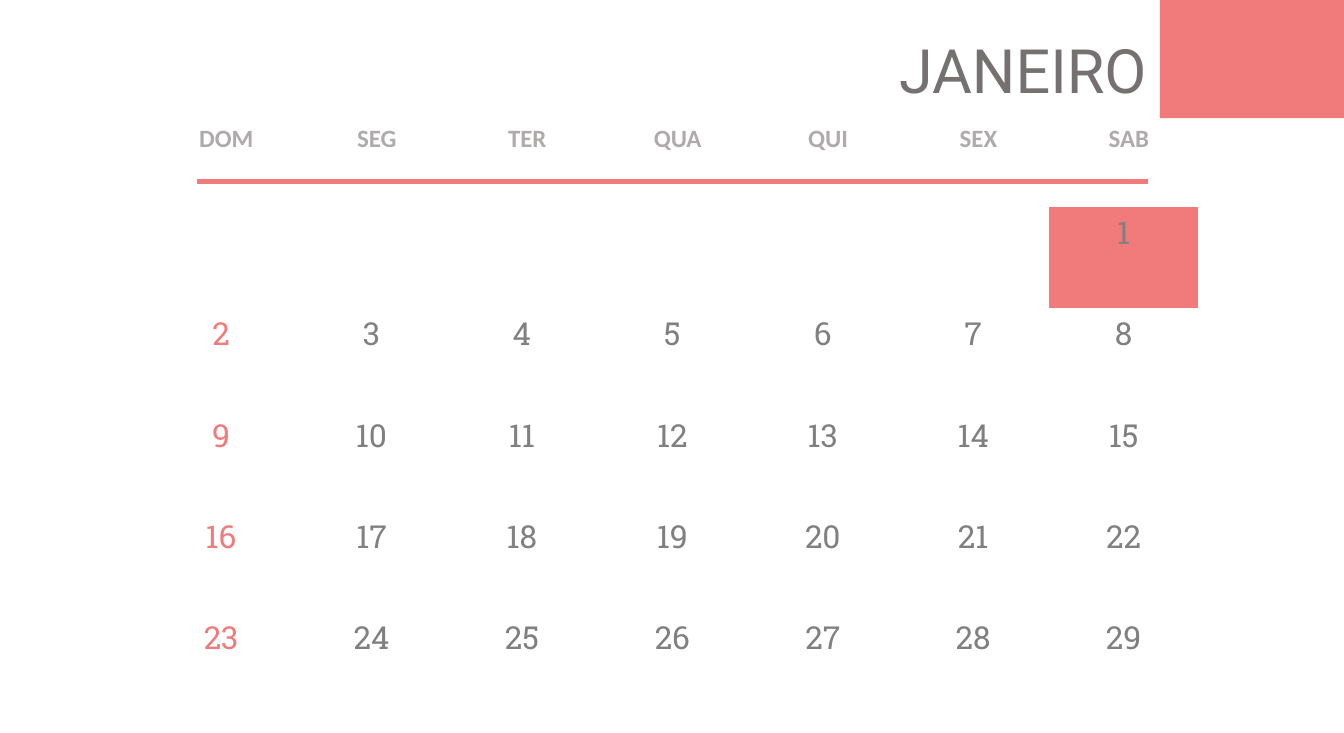
from dataclasses import dataclass

from lxml.etree import SubElement
from pptx import Presentation
from pptx.dml.color import RGBColor
from pptx.enum.shapes import MSO_CONNECTOR as Connector
from pptx.enum.shapes import MSO_SHAPE as Shape
from pptx.enum.text import MSO_AUTO_SIZE as AutoSize
from pptx.enum.text import PP_ALIGN as Align
from pptx.oxml.ns import qn
from pptx.util import Pt

CORAL = RGBColor(0xF1, 0x7B, 0x7B)
DAY_GRAY = RGBColor(0x80, 0x80, 0x80)
WEEKDAY_GRAY = RGBColor(0xAF, 0xAB, 0xAB)
TITLE_GRAY = RGBColor(0x76, 0x71, 0x71)
WHITE = RGBColor(0xFF, 0xFF, 0xFF)

WEEKDAYS = ["DOM", "SEG", "TER", "QUA", "QUI", "SEX", "SAB"]
FIRST_COLUMN = 6  # the month starts on a Saturday
LAST_DAY = 29
HOLIDAYS = {1}
WEEKS = 5

GRID_LEFT, GRID_TOP = 128.88, 104.4
COLUMN_WIDTH, HEADER_HEIGHT, WEEK_HEIGHT = 133, 78.48, 89.42


@dataclass(frozen=True)
class CellStyle:
    font: str
    size: float
    bold: bool
    margins: tuple[float, float, float, float]  # left, top, right, bottom


WEEKDAY_STYLE = CellStyle("Calibri", 22, True, (9.36, 5.04, 0, 5.04))
DAY_STYLE = CellStyle("Roboto Slab", 28, False, (10.08, 4.32, 10.08, 4.32))


def add_borders(cell, color: RGBColor, width: float) -> None:
    properties = cell._tc.get_or_add_tcPr()
    for position, side in enumerate(("a:lnL", "a:lnR", "a:lnT", "a:lnB")):
        border = SubElement(properties, qn(side), w=str(Pt(width)))
        properties.insert(position, border)
        fill = SubElement(border, qn("a:solidFill"))
        SubElement(fill, qn("a:srgbClr"), val=str(color))


def write_cell(cell, text: str, style: CellStyle, color: RGBColor) -> None:
    (cell.margin_left, cell.margin_top,
     cell.margin_right, cell.margin_bottom) = map(Pt, style.margins)
    cell.text = text
    paragraph = cell.text_frame.paragraphs[0]
    paragraph.alignment = Align.CENTER
    font = paragraph.font
    font.name, font.size, font.bold = style.font, Pt(style.size), style.bold
    font.color.rgb = color


def add_calendar(slide) -> None:
    columns = len(WEEKDAYS)
    calendar = slide.shapes.add_table(
        WEEKS + 1, columns, Pt(GRID_LEFT), Pt(GRID_TOP),
        Pt(COLUMN_WIDTH * columns), Pt(HEADER_HEIGHT + WEEK_HEIGHT * WEEKS),
    ).table
    calendar.first_row = calendar.horz_banding = False
    for column in calendar.columns:
        column.width = Pt(COLUMN_WIDTH)
    for index, row in enumerate(calendar.rows):
        row.height = Pt(WEEK_HEIGHT if index else HEADER_HEIGHT)
    for cell in calendar.iter_cells():
        cell.fill.background()
        add_borders(cell, WHITE, 1)

    # Weekday names
    for column, weekday in enumerate(WEEKDAYS):
        write_cell(calendar.cell(0, column), weekday, WEEKDAY_STYLE, WEEKDAY_GRAY)

    # Days, with Sundays in coral
    for day in range(1, LAST_DAY + 1):
        week, column = divmod(day - 1 + FIRST_COLUMN, columns)
        cell = calendar.cell(week + 1, column)
        write_cell(cell, str(day), DAY_STYLE, DAY_GRAY if column else CORAL)
        if day in HOLIDAYS:
            cell.fill.solid()
            cell.fill.fore_color.rgb = CORAL


def add_month(slide, name: str) -> None:
    month = slide.shapes.add_textbox(Pt(787.68), Pt(25.2), Pt(237.6), Pt(72.72))
    frame = month.text_frame
    frame.word_wrap = False
    frame.auto_size = AutoSize.SHAPE_TO_FIT_TEXT
    paragraph = frame.paragraphs[0]
    paragraph.text = name
    font = paragraph.font
    font.name, font.size = "Roboto", Pt(54)
    font.color.rgb = TITLE_GRAY


def add_header_rule(slide) -> None:
    rule = slide.shapes.add_connector(
        Connector.STRAIGHT, Pt(174.24), Pt(160.56), Pt(1014.48), Pt(160.56))
    rule.line.color.rgb = CORAL
    rule.line.width = Pt(4.5)
    SubElement(rule._element.spPr, qn("a:effectLst"))


def add_corner_block(slide) -> None:
    corner = slide.shapes.add_shape(
        Shape.RECTANGLE, Pt(1025.28), Pt(0), Pt(162.72), Pt(104.4))
    corner.shadow.inherit = False
    corner.fill.solid()
    corner.fill.fore_color.rgb = CORAL
    corner.line.fill.background()


def main() -> None:
    deck = Presentation()
    deck.slide_width, deck.slide_height = Pt(1188), Pt(648)
    slide = deck.slides.add_slide(deck.slide_layouts[6])
    add_calendar(slide)
    add_month(slide, "JANEIRO")
    add_header_rule(slide)
    add_corner_block(slide)
    deck.save("out.pptx")


if __name__ == "__main__":
    main()
